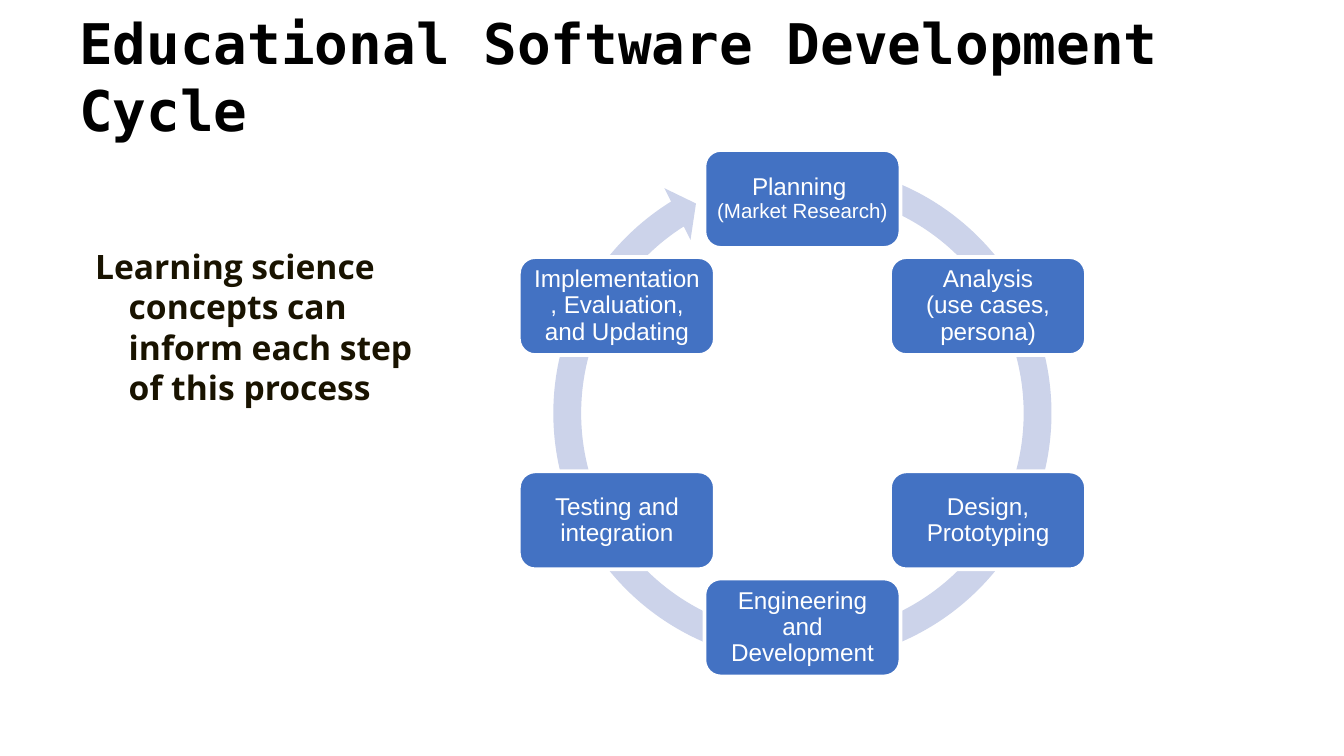
import math
import pptx
import pptx.dml.color
import pptx.enum.shapes
import pptx.enum.text
import pptx.util

Pt = pptx.util.Pt
RGB = pptx.dml.color.RGBColor
SHAPE = pptx.enum.shapes.MSO_SHAPE
ALIGN = pptx.enum.text.PP_ALIGN
ANCHOR = pptx.enum.text.MSO_ANCHOR

BLACK = RGB(0x00, 0x00, 0x00)
BROWN = RGB(0x19, 0x13, 0x00)
WHITE = RGB(0xFF, 0xFF, 0xFF)
BLUE = RGB(0x43, 0x72, 0xC3)
PALE = RGB(0xCC, 0xD3, 0xEA)

MID_X, MID_Y = 429.9, 221.4
ORBIT = 114.8
RING = 283
BOX_W, BOX_H = 105, 52.5
DEGREE = 0.6

STEPS = [
    [("Planning ", 13), ("(Market Research)", 11)],
    [("Analysis", 13), ("(use cases, persona)", 13)],
    [("Design, Prototyping", 13)],
    [("Engineering and Development", 13)],
    [("Testing and integration", 13)],
    [("Implementation, Evaluation, and Updating", 13)],
]


def set_font(para, name, size, color, bold=False):
    para.font.name = name
    para.font.size = Pt(size)
    para.font.color.rgb = color
    para.font.bold = bold


def add_text(slide, area, text, name, size, color, anchor):
    box = slide.shapes.add_textbox(*map(Pt, area))
    frame = box.text_frame
    frame.word_wrap = True
    frame.vertical_anchor = anchor
    para = frame.paragraphs[0]
    para.text = text
    set_font(para, name, size, color, True)
    return para


def add_shape(slide, kind, x, y, width, height, color):
    shape = slide.shapes.add_shape(
        kind, Pt(x - width / 2), Pt(y - height / 2), Pt(width), Pt(height))
    shape.shadow.inherit = False
    shape.fill.solid()
    shape.fill.fore_color.rgb = color
    return shape


def add_ring(slide):
    ring = add_shape(slide, SHAPE.CIRCULAR_ARROW, MID_X, MID_Y, RING, RING, PALE)
    ring.line.fill.background()
    sizes = [0.05, 5.2 * DEGREE, 237.9 * DEGREE, 285 * DEGREE, 0.05]
    sizes[0], sizes[4] = 0.0527, 0.0548
    for i, size in enumerate(sizes):
        ring.adjustments[i] = size


def add_step(slide, angle, lines):
    turn = math.radians(angle)
    x = MID_X + ORBIT * math.sin(turn)
    y = MID_Y - ORBIT * math.cos(turn)
    box = add_shape(slide, SHAPE.ROUNDED_RECTANGLE, x, y, BOX_W, BOX_H, BLUE)
    box.line.color.rgb = WHITE
    box.line.width = Pt(2)
    frame = box.text_frame
    frame.word_wrap = True
    frame.vertical_anchor = ANCHOR.MIDDLE
    frame.margin_left = frame.margin_right = Pt(4.1)
    frame.margin_top = frame.margin_bottom = Pt(3.6)
    for i, (text, size) in enumerate(lines):
        para = frame.add_paragraph() if i else frame.paragraphs[0]
        para.text = text
        para.alignment = ALIGN.CENTER
        para.line_spacing = 0.9
        set_font(para, "Arial", size, WHITE)


def main():
    deck = pptx.Presentation()
    deck.slide_width, deck.slide_height = Pt(720), Pt(405)
    slide = deck.slides.add_slide(deck.slide_layouts[6])
    claim = add_text(slide, (25.9, 128.2, 204.5, 186.5),
                     "Learning science concepts can inform each step of this process",
                     "Open Sans", 18, BROWN, ANCHOR.TOP)
    props = claim._p.get_or_add_pPr()
    props.set("marL", str(Pt(36)))
    props.set("indent", str(Pt(-18)))
    add_text(slide, (35.3, 1.7, 645.1, 78.5), "Educational Software Development Cycle",
             "DejaVu Sans Mono", 30, BLACK, ANCHOR.BOTTOM)
    add_ring(slide)
    for i, lines in enumerate(STEPS):
        add_step(slide, i * 360 / len(STEPS), lines)
    deck.save("out.pptx")


if __name__ == "__main__":
    main()
